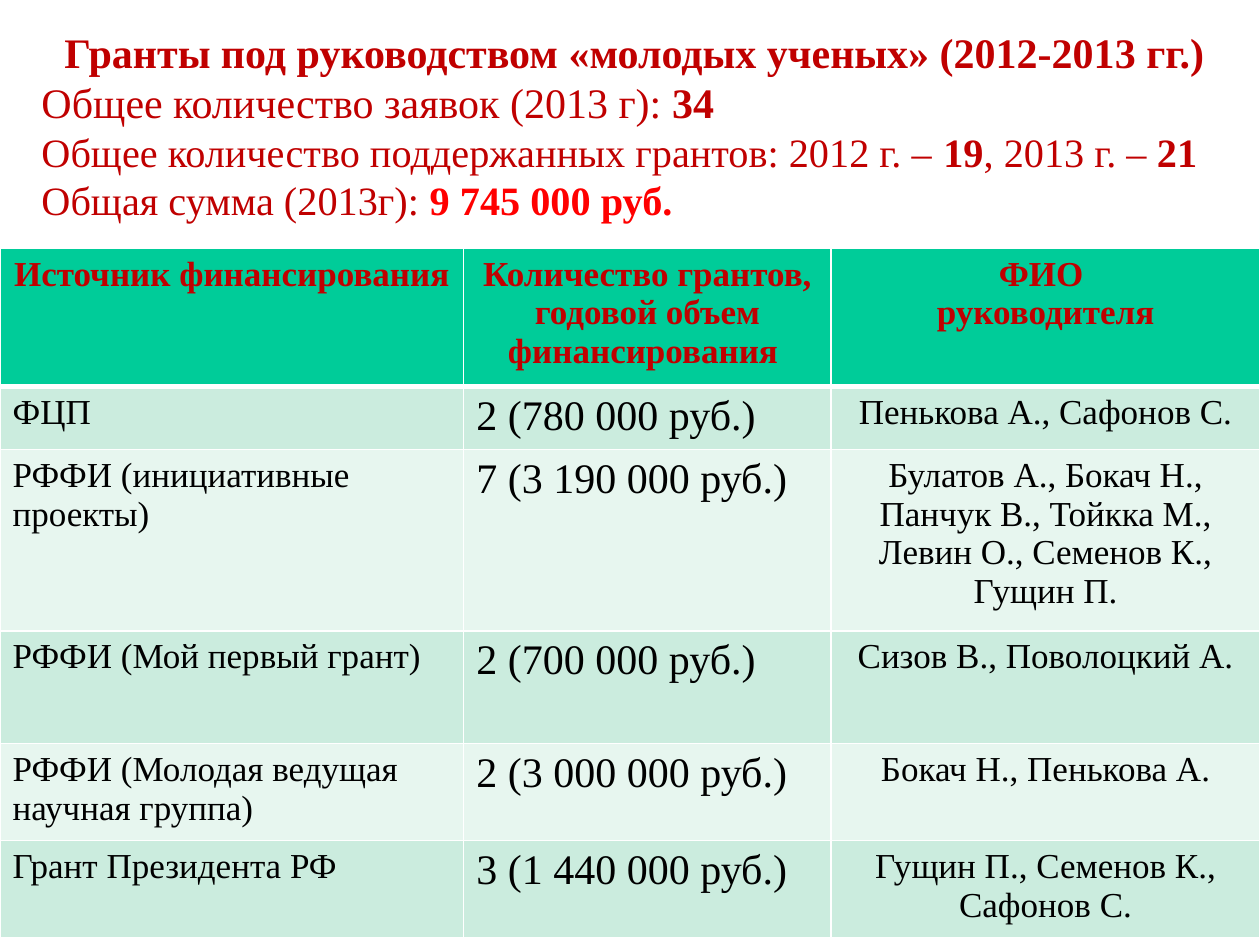
from dataclasses import dataclass

import pptx
import pptx.dml.color
import pptx.enum.text
import pptx.oxml
import pptx.oxml.ns
import pptx.util

Pt = pptx.util.Pt
Align = pptx.enum.text.PP_ALIGN
Anchor = pptx.enum.text.MSO_ANCHOR


@dataclass(frozen=True)
class Theme:
    font: str = "Times New Roman"
    crimson: str = "C00000"
    red: str = "FF0000"
    black: str = "000000"
    white: str = "FFFFFF"
    header: str = "00CC99"
    bands: tuple[str, str] = ("CBECDE", "E7F6EF")
    large: float = 24
    medium: float = 23
    small: float = 20
    thin: float = 1
    thick: float = 3


THEME = Theme()


@dataclass(frozen=True)
class Span:
    text: str
    size: float = THEME.small
    color: str = THEME.black
    bold: bool = False


@dataclass(frozen=True)
class Line:
    spans: tuple[Span, ...]
    align: Align = Align.LEFT


@dataclass(frozen=True)
class Grant:
    source: str
    amount: str
    leaders: str
    height: float


def heading_span(text: str, size: float, bold: bool = False, color: str = THEME.crimson) -> Span:
    return Span(text, size, color, bold)


HEADING = (
    Line((heading_span("Гранты под руководством «молодых ученых» (2012-2013 гг.)", THEME.large, True),), Align.CENTER),
    Line((
        heading_span("Общее количество заявок (2013 г): ", THEME.large),
        heading_span("34", THEME.large, True),
    )),
    Line((
        heading_span("Общее количество поддержанных грантов: 2012 г. – ", THEME.medium),
        heading_span("19", THEME.medium, True),
        heading_span(", 2013 г. – ", THEME.medium),
        heading_span("21", THEME.medium, True),
    )),
    Line((
        heading_span("Общая сумма (2013г): ", THEME.medium),
        heading_span("9 745 000 руб.", THEME.medium, True, THEME.red),
    )),
)

COLUMN_TITLES = (
    ("Источник финансирования",),
    ("Количество грантов, годовой объем финансирования ",),
    ("ФИО ", "руководителя"),
)
COLUMN_WIDTHS = (265, 210, 245)
HEADER_HEIGHT = 79

GRANTS = (
    Grant("ФЦП", "2 (780 000 руб.)", "Пенькова А., Сафонов С.", 36),
    Grant("РФФИ (инициативные проекты)", "7 (3 190 000 руб.)",
          "Булатов А., Бокач Н., Панчук В., Тойкка М., Левин О., Семенов К., Гущин П.", 103.5),
    Grant("РФФИ (Мой первый грант)", "2 (700 000 руб.)", "Сизов В., Поволоцкий А.", 64.5),
    Grant("РФФИ (Молодая ведущая научная группа)", "2 (3 000 000 руб.)", "Бокач Н., Пенькова А.", 55.5),
    Grant("Грант Президента РФ", "3 (1 440 000 руб.)", "Гущин П., Семенов К., Сафонов С.", 55.5),
)


def set_format(target: object, values: dict[str, object]) -> None:
    for name, value in values.items():
        setattr(target, name, value)


def write_lines(frame: object, lines: tuple[Line, ...]) -> None:
    for index, line in enumerate(lines):
        para = frame.paragraphs[0] if index == 0 else frame.add_paragraph()
        set_format(para, {"alignment": line.align, "line_spacing": 1.0,
                          "space_before": Pt(0), "space_after": Pt(0)})
        for span in line.spans:
            run = para.add_run()
            run.text = span.text
            set_format(run.font, {"name": THEME.font, "size": Pt(span.size), "bold": span.bold})
            run.font.color.rgb = pptx.dml.color.RGBColor.from_string(span.color)


def draw_borders(cell: object, widths: dict[str, float]) -> None:
    properties = cell._tc.get_or_add_tcPr()
    for index, (side, width) in enumerate(widths.items()):
        border = pptx.oxml.parse_xml(
            f'<a:{side} {pptx.oxml.ns.nsdecls("a")} w="{Pt(width)}">'
            f'<a:solidFill><a:srgbClr val="{THEME.white}"/></a:solidFill></a:{side}>'
        )
        properties.insert(index, border)


def draw_cell(cell: object, lines: tuple[Line, ...], fill: str, top: float, bottom: float) -> None:
    set_format(cell, {"margin_left": Pt(7.2), "margin_right": Pt(7.2), "margin_top": Pt(3.6),
                      "margin_bottom": Pt(3.6), "vertical_anchor": Anchor.TOP})
    cell.fill.solid()
    cell.fill.fore_color.rgb = pptx.dml.color.RGBColor.from_string(fill)
    draw_borders(cell, {"lnL": THEME.thin, "lnR": THEME.thin, "lnT": top, "lnB": bottom})
    write_lines(cell.text_frame, lines)


def draw_heading(page: object) -> None:
    box = page.shapes.title
    set_format(box, {"left": Pt(16.5), "top": Pt(11.5), "width": Pt(692), "height": Pt(178)})
    set_format(box.text_frame, {"word_wrap": True, "vertical_anchor": Anchor.TOP,
                                "auto_size": pptx.enum.text.MSO_AUTO_SIZE.NONE})
    write_lines(box.text_frame, HEADING)


def draw_grants(page: object) -> None:
    heights = (HEADER_HEIGHT, *(grant.height for grant in GRANTS))
    table = page.shapes.add_table(
        len(heights), len(COLUMN_WIDTHS), Pt(0), Pt(142), Pt(sum(COLUMN_WIDTHS)), Pt(sum(heights))
    ).table
    for column, width in zip(table.columns, COLUMN_WIDTHS):
        column.width = Pt(width)
    for row, height in zip(table.rows, heights):
        row.height = Pt(height)
    for column, titles in enumerate(COLUMN_TITLES):
        lines = tuple(Line((Span(title, THEME.small, THEME.crimson, True),), Align.CENTER) for title in titles)
        draw_cell(table.cell(0, column), lines, THEME.header, THEME.thin, THEME.thick)
    for row, grant in enumerate(GRANTS, 1):
        lines = (
            Line((Span(grant.source),)),
            Line((Span(grant.amount, THEME.large),)),
            Line((Span(grant.leaders),), Align.CENTER),
        )
        top = THEME.thick if row == 1 else THEME.thin
        for column, line in enumerate(lines):
            draw_cell(table.cell(row, column), (line,), THEME.bands[(row - 1) % 2], top, THEME.thin)


def main() -> None:
    deck = pptx.Presentation()
    set_format(deck, {"slide_width": Pt(720), "slide_height": Pt(540)})
    page = deck.slides.add_slide(deck.slide_layouts[5])
    draw_heading(page)
    draw_grants(page)
    deck.save("out.pptx")


if __name__ == "__main__":
    main()
